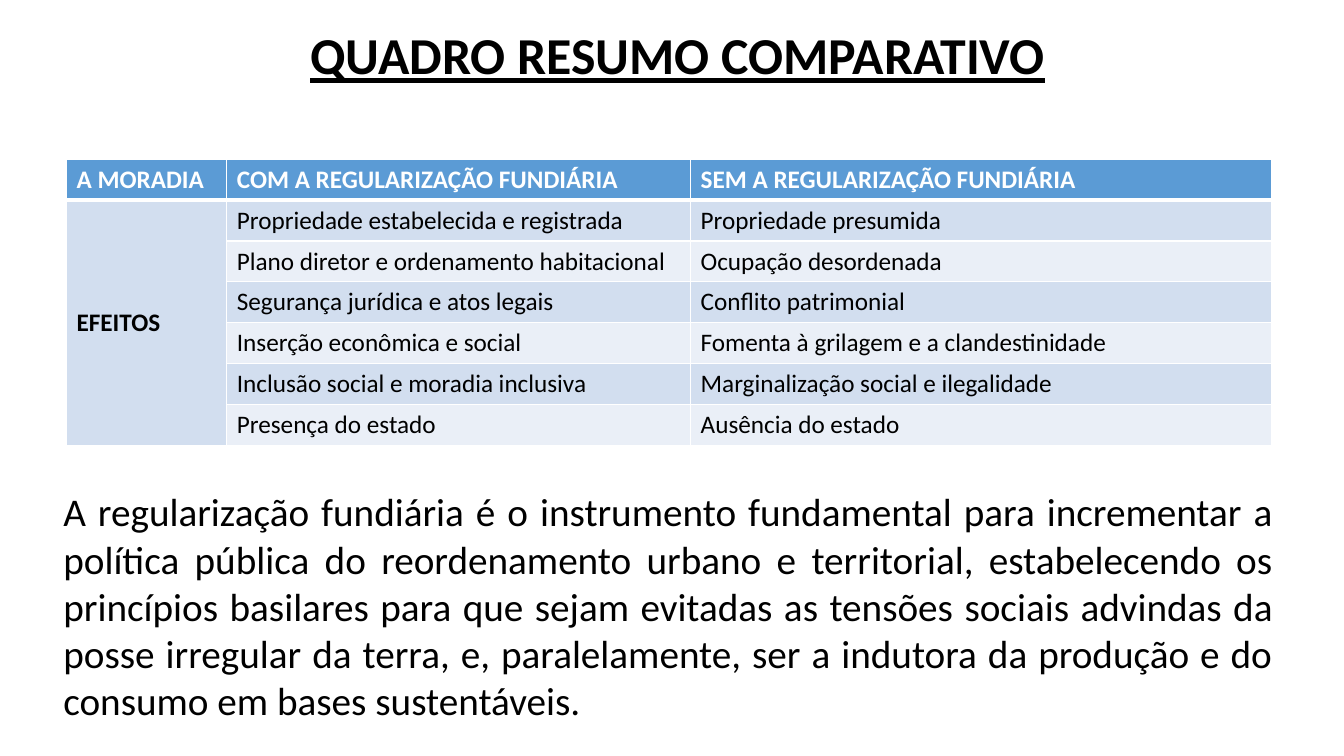
import pptx
import pptx.dml.color
import pptx.enum.text
import pptx.oxml
import pptx.oxml.ns
import pptx.util
from pptx.util import Inches

BLACK, WHITE = "000000", "FFFFFF"
HEADER_BLUE, BAND_DARK, BAND_LIGHT = "5B9BD5", "D2DEEF", "EAEFF7"


def color(value):
    return pptx.dml.color.RGBColor.from_string(value)


def write(frame, text, size, ink=BLACK, bold=False):
    frame.word_wrap = True
    paragraph = frame.paragraphs[0]
    paragraph.text = text
    font = paragraph.font
    font.name, font.size, font.bold = "Calibri", pptx.util.Pt(size), bold
    font.color.rgb = color(ink)
    return paragraph


presentation = pptx.Presentation()
presentation.slide_width, presentation.slide_height = Inches(13.33), Inches(7.5)
slide = presentation.slides.add_slide(presentation.slide_layouts[6])

# Title
title = slide.shapes.add_textbox(Inches(0.31), Inches(0.25), Inches(12.82), Inches(0.8))
heading = write(title.text_frame, "QUADRO RESUMO COMPARATIVO", 37, bold=True)
heading.alignment = pptx.enum.text.PP_ALIGN.CENTER
heading.line_spacing = 0.9
heading.font.underline = True

# Comparison table
rows = [
    ("A MORADIA", "COM A REGULARIZAÇÃO FUNDIÁRIA", "SEM A REGULARIZAÇÃO FUNDIÁRIA"),
    ("EFEITOS", "Propriedade estabelecida e registrada", "Propriedade presumida"),
    ("", "Plano diretor e ordenamento habitacional", "Ocupação desordenada"),
    ("", "Segurança jurídica e atos legais", "Conflito patrimonial"),
    ("", "Inserção econômica e social", "Fomenta à grilagem e a clandestinidade"),
    ("", "Inclusão social e moradia inclusiva", "Marginalização social e ilegalidade"),
    ("", "Presença do estado", "Ausência do estado"),
]
column_widths = (1.59, 4.6, 5.76)
comparison = slide.shapes.add_table(
    len(rows), len(column_widths), Inches(0.66), Inches(1.58), Inches(11.95), Inches(2.84)
).table
for column, width in zip(comparison.columns, column_widths):
    column.width = Inches(width)

for r, row in enumerate(rows):
    for c, text in enumerate(row):
        cell = comparison.cell(r, c)
        # White borders, thicker below the header
        for side in "LRTB":
            thick = (r, side) in ((0, "B"), (1, "T"))
            cell._tc.get_or_add_tcPr().append(pptx.oxml.parse_xml(
                f'<a:ln{side} {pptx.oxml.ns.nsdecls("a")} w="{pptx.util.Pt(3 if thick else 1)}">'
                f'<a:solidFill><a:srgbClr val="{WHITE}"/></a:solidFill></a:ln{side}>'))
        if r == 0:
            band = HEADER_BLUE
        else:
            band = BAND_DARK if r % 2 or c == 0 else BAND_LIGHT
        cell.fill.solid()
        cell.fill.fore_color.rgb = color(band)
        if text:
            write(cell.text_frame, text, 18, WHITE if r == 0 else BLACK, r == 0 or c == 0)

effects = comparison.cell(1, 0)
effects.merge(comparison.cell(len(rows) - 1, 0))
effects.vertical_anchor = pptx.enum.text.MSO_ANCHOR.MIDDLE

# Conclusion
conclusion = slide.shapes.add_textbox(Inches(0.53), Inches(4.79), Inches(12.19), Inches(2.46))
closing = write(
    conclusion.text_frame,
    "A regularização fundiária é o instrumento fundamental para incrementar a política "
    "pública do reordenamento urbano e territorial, estabelecendo os princípios basilares "
    "para que sejam evitadas as tensões sociais advindas da posse irregular da terra, e, "
    "paralelamente, ser a indutora da produção e do consumo em bases sustentáveis.",
    28,
)
closing.alignment = pptx.enum.text.PP_ALIGN.JUSTIFY

presentation.save("out.pptx")
